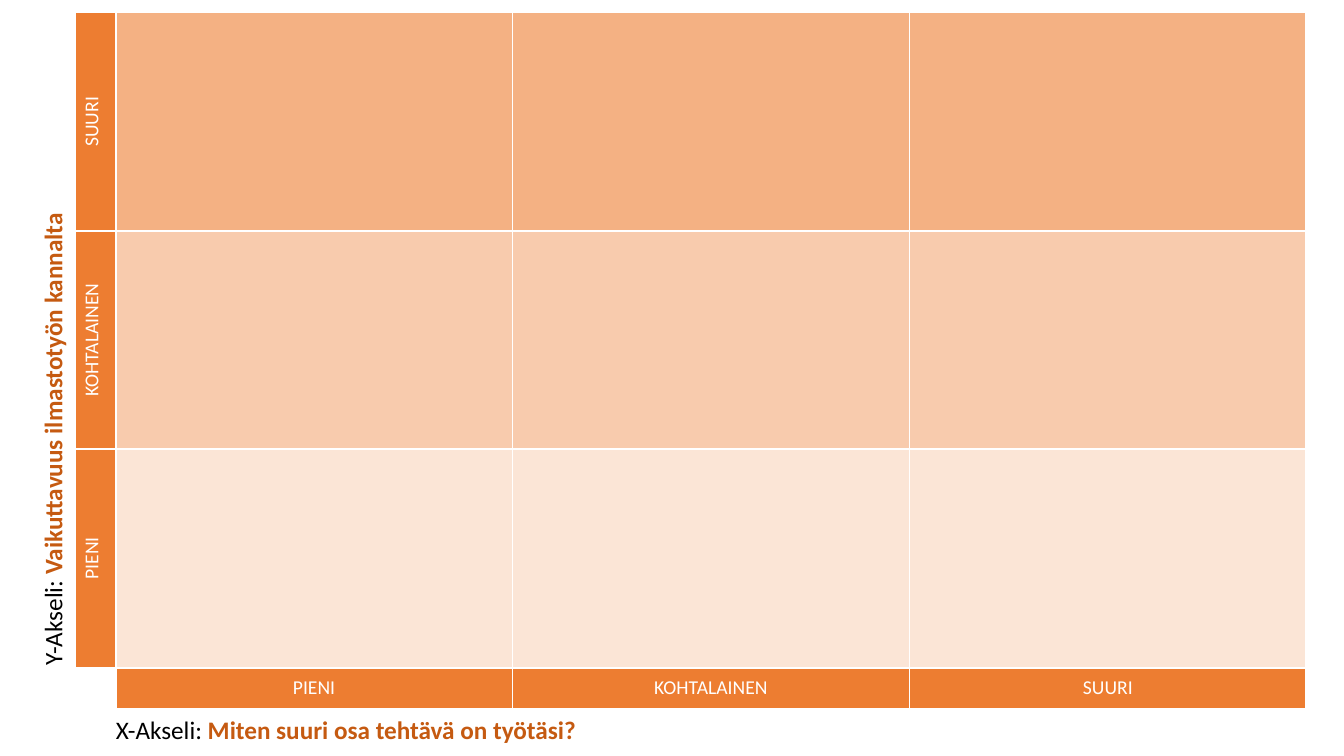
from lxml.etree import SubElement
from pptx import Presentation
from pptx.dml.color import RGBColor
from pptx.enum.text import MSO_ANCHOR, MSO_AUTO_SIZE, PP_ALIGN
from pptx.oxml.ns import qn
from pptx.util import Pt

ORANGE = RGBColor(0xED, 0x7D, 0x31)
DARK_ORANGE = RGBColor(0xC5, 0x5A, 0x11)
BLACK = RGBColor(0, 0, 0)
WHITE = RGBColor(0xFF, 0xFF, 0xFF)
FONT = "Calibri"

IMPACT_LEVELS = [
    ("SUURI", RGBColor(0xF4, 0xB1, 0x83)),
    ("KOHTALAINEN", RGBColor(0xF8, 0xCB, 0xAD)),
    ("PIENI", RGBColor(0xFB, 0xE5, 0xD6)),
]
SHARE_LEVELS = ["PIENI", "KOHTALAINEN", "SUURI"]
# axis name, question, (left, top, width, height), rotation, wrap
AXES = [
    ("Y-Akseli: ", "Vaikuttavuus ilmastotyön kannalta", (-148.3, 282.2, 371.5, 29), 270, True),
    ("X-Akseli: ", "Miten suuri osa tehtävä on työtäsi?", (75.6, 507, 351.4, 29), 0, False),
]

MATRIX_LEFT, MATRIX_TOP = 53.4, 8.9
BAND = 29.2
FIELD_WIDTH, FIELD_HEIGHT = 283.5, 156


def style_run(run, size, color, bold=False):
    font = run.font
    font.name, font.size, font.bold = FONT, Pt(size), bold
    font.color.rgb = color


def add_borders(cell):
    properties = cell._tc.get_or_add_tcPr()
    for side in ("L", "R", "T", "B"):
        line = SubElement(properties, qn(f"a:ln{side}"), w=str(Pt(1.5)))
        solid = SubElement(line, qn("a:solidFill"))
        SubElement(solid, qn("a:srgbClr"), val=str(WHITE))


def fill_cell(cell, color):
    cell.fill.solid()
    cell.fill.fore_color.rgb = color


def write_level(cell, level, vertical=False):
    fill_cell(cell, ORANGE)
    cell.text_frame.text = level
    cell.vertical_anchor = MSO_ANCHOR.MIDDLE
    paragraph = cell.text_frame.paragraphs[0]
    paragraph.alignment = PP_ALIGN.CENTER
    style_run(paragraph.runs[0], 14, WHITE)
    if vertical:
        cell._tc.get_or_add_tcPr().set("vert", "vert270")


def add_matrix(slide):
    widths = [BAND] + [FIELD_WIDTH] * len(SHARE_LEVELS)
    heights = [FIELD_HEIGHT] * len(IMPACT_LEVELS) + [BAND]
    frame = slide.shapes.add_table(len(heights), len(widths), Pt(MATRIX_LEFT), Pt(MATRIX_TOP),
                                   Pt(sum(widths)), Pt(sum(heights)))
    matrix = frame.table
    matrix.first_row = matrix.horz_banding = False
    for column, width in zip(matrix.columns, widths):
        column.width = Pt(width)
    for row, height in zip(matrix.rows, heights):
        row.height = Pt(height)
    for cell in matrix.iter_cells():
        add_borders(cell)

    for row, (level, tint) in enumerate(IMPACT_LEVELS):
        write_level(matrix.cell(row, 0), level, vertical=True)
        for column in range(1, len(widths)):
            fill_cell(matrix.cell(row, column), tint)
    bottom = len(IMPACT_LEVELS)
    matrix.cell(bottom, 0).fill.background()
    for column, level in enumerate(SHARE_LEVELS, 1):
        write_level(matrix.cell(bottom, column), level)


def add_axis(slide, name, question, place, rotation, wrap):
    axis = slide.shapes.add_textbox(*map(Pt, place))
    axis.rotation = rotation
    axis.text_frame.word_wrap = wrap
    axis.text_frame.auto_size = MSO_AUTO_SIZE.SHAPE_TO_FIT_TEXT
    paragraph = axis.text_frame.paragraphs[0]
    for text, color, bold in ((name, BLACK, False), (question, DARK_ORANGE, True)):
        run = paragraph.add_run()
        run.text = text
        style_run(run, 18, color, bold)


def main():
    deck = Presentation()
    deck.slide_width, deck.slide_height = Pt(960), Pt(540)
    slide = deck.slides.add_slide(deck.slide_layouts[6])
    add_matrix(slide)
    for axis in AXES:
        add_axis(slide, *axis)
    deck.save("out.pptx")


if __name__ == "__main__":
    main()
